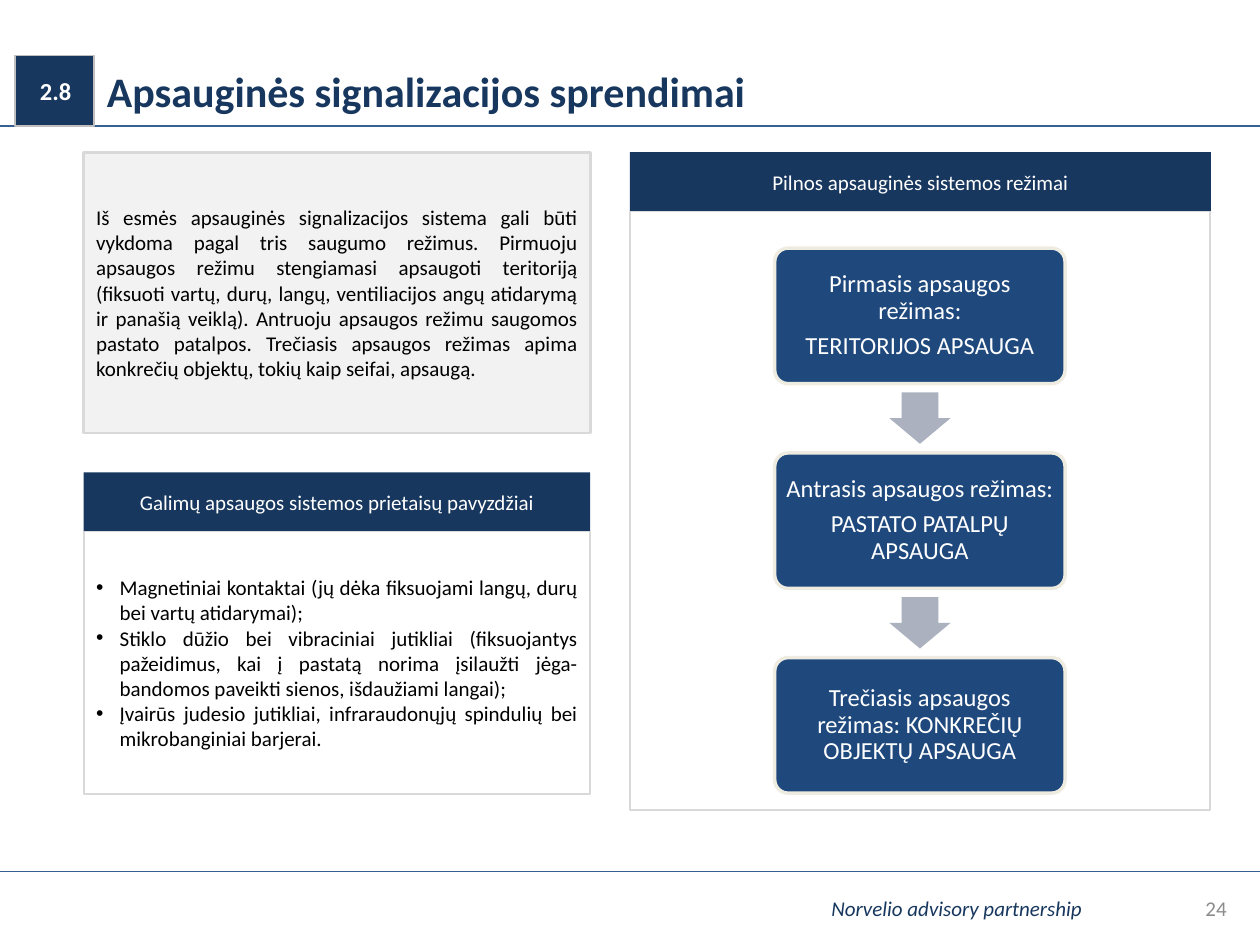
import pptx
import pptx.util
import pptx.dml.color
import pptx.enum.shapes
import pptx.enum.text
import lxml.etree

Pt = pptx.util.Pt
KIND = pptx.enum.shapes.MSO_SHAPE
ALIGN = pptx.enum.text.PP_ALIGN
INK = {"navy": "17375E", "blue": "1F497D", "rule": "376092", "cream": "EEECE1",
       "edge": "D9D9D9", "rim": "BFBFBF", "pale": "F2F2F2", "arrow": "ACB1BF",
       "gray": "8C8C8C", "white": "FFFFFF", "black": "000000"}

TITLE = "Apsauginės signalizacijos sprendimai"
FIRM = "Norvelio advisory partnership"
INTRO = ("Iš esmės apsauginės signalizacijos sistema gali būti vykdoma pagal tris "
         "saugumo režimus. Pirmuoju apsaugos režimu stengiamasi apsaugoti teritoriją "
         "(fiksuoti vartų, durų, langų, ventiliacijos angų atidarymą ir panašią veiklą). "
         "Antruoju apsaugos režimu saugomos pastato patalpos. Trečiasis apsaugos režimas "
         "apima konkrečių objektų, tokių kaip seifai, apsaugą.")
TOOLS = [
    "Magnetiniai kontaktai (jų dėka fiksuojami langų, durų bei vartų atidarymai);",
    "Stiklo dūžio bei vibraciniai jutikliai (fiksuojantys pažeidimus, kai į pastatą "
    "norima įsilaužti jėga- bandomos paveikti sienos, išdaužiami langai);",
    "Įvairūs judesio jutikliai, infraraudonųjų spindulių bei mikrobanginiai barjerai."]
MODES = [["Pirmasis apsaugos režimas:", "TERITORIJOS APSAUGA"],
         ["Antrasis apsaugos režimas:", "PASTATO PATALPŲ APSAUGA"],
         ["Trečiasis apsaugos režimas: KONKREČIŲ OBJEKTŲ APSAUGA"]]

deck = pptx.Presentation()
deck.slide_width, deck.slide_height = Pt(720), Pt(540)
slide = deck.slides.add_slide(deck.slide_layouts[6])
shapes = slide.shapes


def color(name):
    return pptx.dml.color.RGBColor.from_string(INK[name])


def write(shape, lines, ink, size=12, align=ALIGN.LEFT, bold=False, slant=False):
    frame = shape.text_frame
    frame.word_wrap = True
    frame.vertical_anchor = pptx.enum.text.MSO_ANCHOR.MIDDLE
    frame.text = "\n".join(lines)
    for para in frame.paragraphs:
        para.alignment = align
        for run in para.runs:
            font = run.font
            font.name, font.size = "Calibri", Pt(size)
            font.bold, font.italic = bold, slant
            font.color.rgb = color(ink)


def label(place, text, ink, **style):
    write(shapes.add_textbox(*map(Pt, place)), [text], ink, **style)


def block(place, fill, edge=None, width=1, kind=KIND.RECTANGLE):
    shape = shapes.add_shape(kind, *map(Pt, place))
    shape.shadow.inherit = False
    shape.fill.solid()
    shape.fill.fore_color.rgb = color(fill)
    if edge:
        shape.line.color.rgb = color(edge)
        shape.line.width = Pt(width)
    else:
        shape.line.fill.background()
    return shape


def header(place, text):
    write(block(place, "navy"), [text], "white", align=ALIGN.CENTER)


def rule(top):
    line = shapes.add_connector(pptx.enum.shapes.MSO_CONNECTOR.STRAIGHT,
                                0, Pt(top), Pt(720), Pt(top))
    line.line.color.rgb = color("rule")
    line.line.width = Pt(1)
    space = pptx.oxml.ns.qn("a:effectLst")
    lxml.etree.SubElement(line._element.spPr, space)


def bullet(para):
    props = para._p.get_or_add_pPr()
    props.set("marL", str(Pt(13.5)))
    props.set("indent", str(-Pt(13.5)))
    font = lxml.etree.SubElement(props, pptx.oxml.ns.qn("a:buFont"))
    font.set("typeface", "Arial")
    mark = lxml.etree.SubElement(props, pptx.oxml.ns.qn("a:buChar"))
    mark.set("char", "•")


rule(72)
rule(498)
label((468, 508.5, 249, 21), FIRM, "navy", slant=True)
label((540, 504.5, 168, 29), "24", "gray", align=ALIGN.RIGHT)
label((54, 32.5, 622, 38), TITLE, "navy", size=24, bold=True)

LEFT, WIDE, HEAD = 47.8, 289.5, 33.8
header((LEFT, 270, WIDE, HEAD), "Galimų apsaugos sistemos prietaisų pavyzdžiai")
intro = block((LEFT, 87, WIDE, 160.5), "pale", "edge", 1.5)
write(intro, [INTRO], "black", align=ALIGN.JUSTIFY)
tools = block((LEFT, 270 + HEAD, WIDE, 150), "white", "edge")
write(tools, TOOLS, "black", align=ALIGN.JUSTIFY)
for para in tools.text_frame.paragraphs:
    bullet(para)

header((360, 87, 332, HEAD), "Pilnos apsauginės sistemos režimai")
block((360, 87 + HEAD, 331.5, 342), "white", "edge")

MID, TOP, STEP = 525.7, 141.8, 117
CARD, TALL = 166, 77.5
for i, mode in enumerate(MODES):
    top = TOP + i * STEP
    card = block((MID - CARD / 2, top, CARD, TALL), "blue", "cream", 2,
                 KIND.ROUNDED_RECTANGLE)
    card.adjustments[0] = 0.1
    frame = card.text_frame
    frame.margin_left = frame.margin_right = Pt(4.3)
    frame.margin_top = frame.margin_bottom = Pt(4.3)
    write(card, mode, "white", size=14, align=ALIGN.CENTER)
    for para in frame.paragraphs:
        para.line_spacing = 0.9
        para.space_after = Pt(5)
    if i < len(MODES) - 1:
        arrow = block((MID - 17.5, top + TALL + 5, 35, 29.3), "arrow",
                      kind=KIND.DOWN_ARROW)
        arrow.adjustments[0], arrow.adjustments[1] = 0.6, 0.5

badge = block((8.6, 31.7, 45.2, 40.3), "navy", "rim")
badge.text_frame.margin_left = Pt(14.2)
write(badge, ["2.8"], "white", size=14, bold=True)

deck.save("out.pptx")
